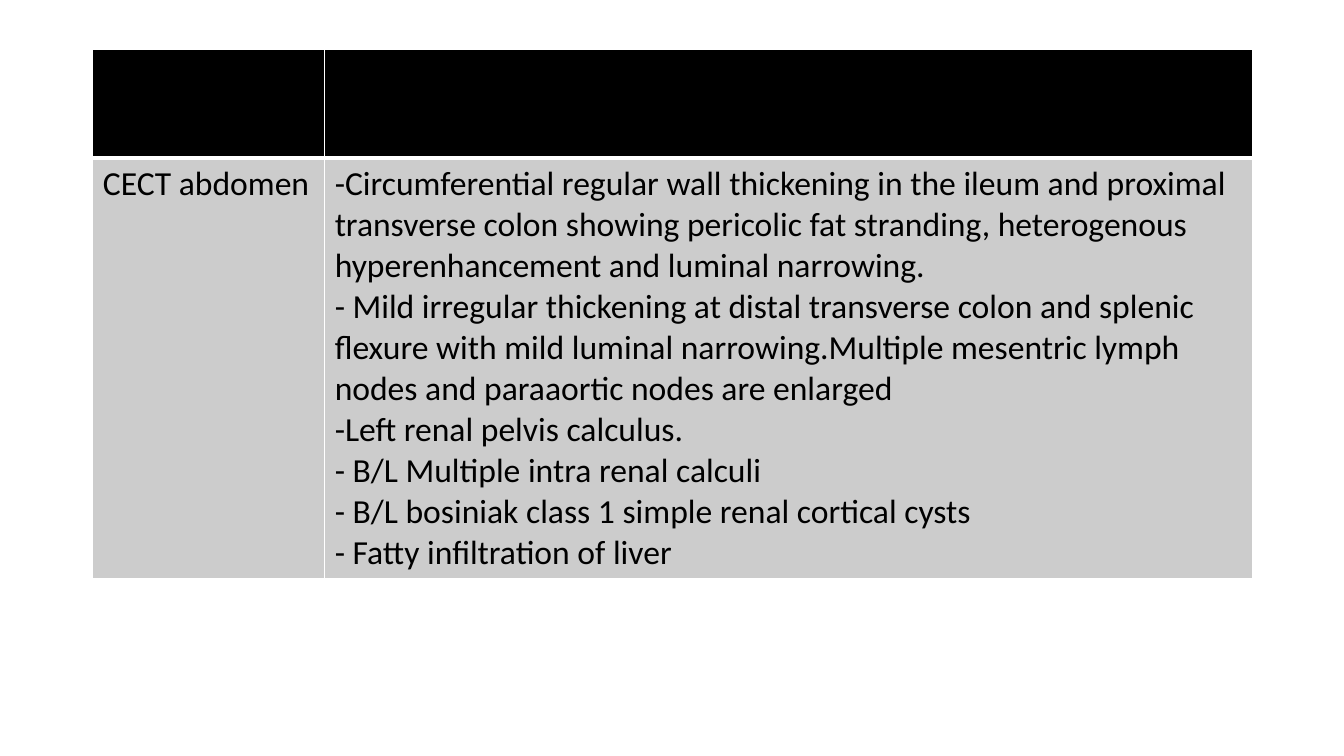
import lxml.etree
import pptx
import pptx.dml.color
import pptx.oxml.ns
import pptx.util

BLACK = pptx.dml.color.RGBColor(0x00, 0x00, 0x00)
GREY = pptx.dml.color.RGBColor(0xCC, 0xCC, 0xCC)
WHITE = pptx.dml.color.RGBColor(0xFF, 0xFF, 0xFF)

FINDINGS = [
    "-Circumferential regular wall thickening in the ileum and proximal transverse colon "
    "showing pericolic fat stranding, heterogenous hyperenhancement and luminal narrowing.",
    "- Mild irregular thickening at distal transverse colon and splenic flexure with mild "
    "luminal narrowing.Multiple mesentric lymph nodes and paraaortic nodes are enlarged",
    "-Left renal pelvis calculus.",
    "- B/L Multiple intra renal calculi",
    "- B/L bosiniak class 1 simple renal cortical cysts",
    "- Fatty infiltration of liver",
]


def write_text(frame, paragraphs, *, font="Calibri", size=24, color=BLACK):
    """Fill a text frame with one formatted run per paragraph."""
    for index, wording in enumerate(paragraphs):
        paragraph = frame.add_paragraph() if index else frame.paragraphs[0]
        run = paragraph.add_run()
        run.text = wording
        run.font.name = font
        run.font.size = pptx.util.Pt(size)
        run.font.color.rgb = color


class ReportSlide:
    """Holds the slide and the grid on which the report is laid out."""

    LEFT, TOP, COLUMN = 0.92, 0.49, 2.3

    def __init__(self, presentation):
        """Add a blank slide."""
        self.slide = presentation.slides.add_slide(presentation.slide_layouts[6])

    def border(self, cell, **widths):
        """Draw white cell edges, in points, given in the order L, R, T, B."""
        properties = cell._tc.get_or_add_tcPr()
        for side, width in widths.items():
            edge = lxml.etree.SubElement(
                properties, pptx.oxml.ns.qn(f"a:ln{side}"), w=str(pptx.util.Pt(width)))
            fill = lxml.etree.SubElement(edge, pptx.oxml.ns.qn("a:solidFill"))
            lxml.etree.SubElement(fill, pptx.oxml.ns.qn("a:srgbClr"), val=str(WHITE))

    def table(self, rows, spans, heights):
        """Add a table with a black header row and grey body rows."""
        widths = [span * self.COLUMN for span in spans]
        box = [pptx.util.Inches(n) for n in (self.LEFT, self.TOP, sum(widths), sum(heights))]
        report = self.slide.shapes.add_table(len(rows), len(spans), *box).table
        for column, width in zip(report.columns, widths):
            column.width = pptx.util.Inches(width)
        for index, (row, height, contents) in enumerate(zip(report.rows, heights, rows)):
            row.height = pptx.util.Inches(height)
            for cell, paragraphs in zip(row.cells, contents):
                self.border(cell, L=1, R=1, T=3 if index == 1 else 1, B=1 if index else 3)
                cell.fill.solid()
                cell.fill.fore_color.rgb = GREY if index else BLACK
                write_text(cell.text_frame, paragraphs)


def main():
    """Build and save the report slide."""
    presentation = pptx.Presentation()
    presentation.slide_width = pptx.util.Inches(13.33)
    presentation.slide_height = pptx.util.Inches(7.5)
    report = ReportSlide(presentation)
    report.table([[[], []], [["CECT abdomen"], FINDINGS]], spans=[1, 4], heights=[1.08, 4.08])
    presentation.save("out.pptx")


if __name__ == "__main__":
    main()
